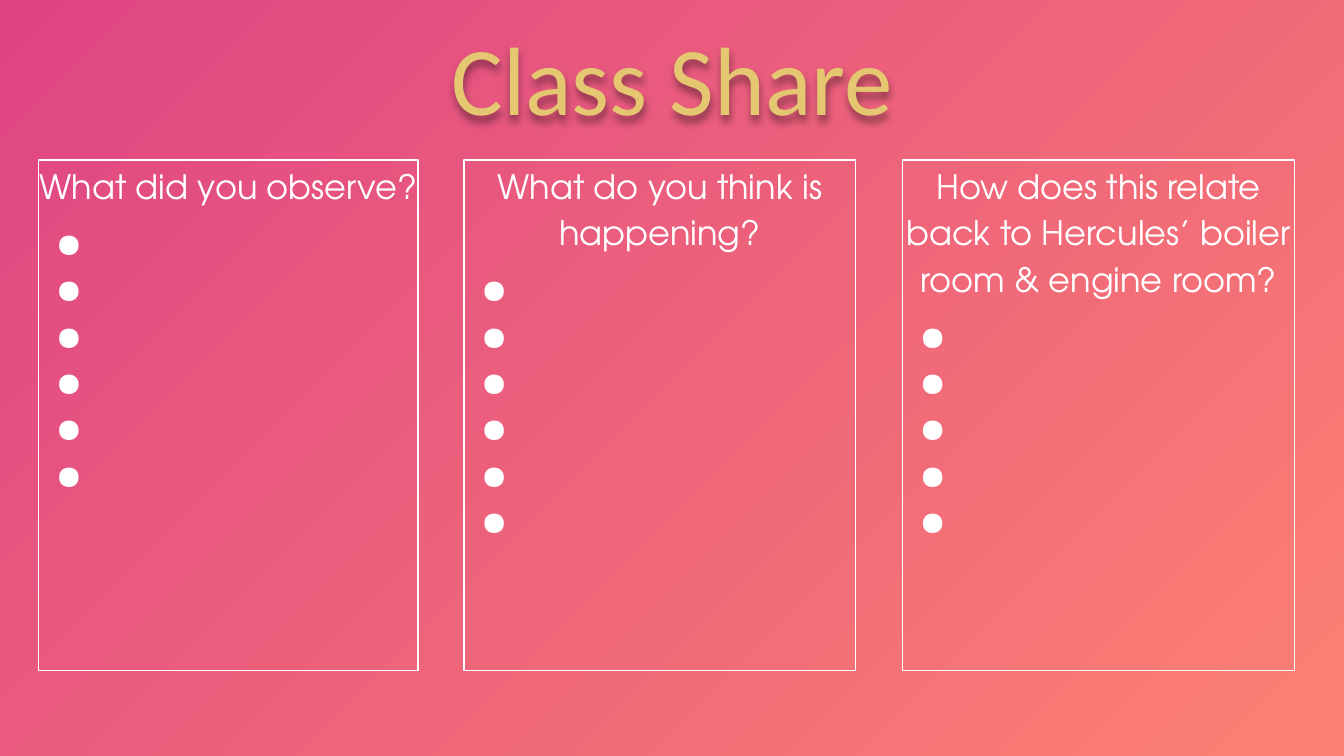
from lxml.etree import SubElement
from pptx import Presentation
from pptx.dml.color import RGBColor
from pptx.enum.shapes import MSO_SHAPE as SHAPE
from pptx.enum.text import MSO_ANCHOR as ANCHOR, MSO_AUTO_SIZE as AUTO, PP_ALIGN as ALIGN
from pptx.oxml.ns import qn
from pptx.util import Pt

WHITE = RGBColor(0xFF, 0xFF, 0xFF)
GOLD = RGBColor(0xE5, 0xC7, 0x71)
CORAL = RGBColor(0xFC, 0x81, 0x72)
PINK = RGBColor(0xDF, 0x45, 0x84)


def add_text(p, text, size=18, font="TeX Gyre Adventor", color=WHITE,
             align=ALIGN.LEFT, spacing=1.15, before=0):
    p.alignment, p.line_spacing, p.space_before = align, spacing, Pt(before)
    r = p.add_run()
    r.text = text
    r.font.size, r.font.name = Pt(size), font
    r.font.color.rgb = color


def add_bullet(p, indent=36, hanging=27):
    pPr = p._p.get_or_add_pPr()
    pPr.set("marL", str(Pt(indent)))
    pPr.set("indent", str(-Pt(hanging)))
    clr = SubElement(pPr, qn("a:buClr"))
    SubElement(clr, qn("a:srgbClr"), val=str(WHITE))
    SubElement(pPr, qn("a:buChar"), char="●")


class Deck:
    def __init__(self, width, height):
        self.prs = Presentation()
        self.prs.slide_width, self.prs.slide_height = Pt(width), Pt(height)
        self.slide = self.prs.slides.add_slide(self.prs.slide_layouts[5])

    def background(self, start, end):
        """Gradient that spreads from the bottom right corner."""
        fill = self.slide.background.fill
        fill.gradient()
        for stop, color, pos in zip(fill.gradient_stops, (start, end), (0, 1)):
            stop.color.rgb, stop.position = color, pos
        grad = self.slide._element.find(".//" + qn("a:gradFill"))
        grad.remove(grad.find(qn("a:lin")))
        circle = SubElement(grad, qn("a:path"), path="circle")
        SubElement(circle, qn("a:fillToRect"), l="100000", t="100000")

    def frame(self, sp, anchor):
        tf = sp.text_frame
        tf.word_wrap, tf.auto_size, tf.vertical_anchor = True, AUTO.NONE, anchor
        tf.margin_left = tf.margin_right = tf.margin_top = tf.margin_bottom = 0
        return tf

    def title(self, text, left, top, width, height):
        sp = self.slide.shapes.title
        sp.left, sp.top, sp.width, sp.height = map(Pt, (left, top, width, height))
        tf = self.frame(sp, ANCHOR.BOTTOM)
        add_text(tf.paragraphs[0], text, size=52, font="Calibri", color=GOLD,
                 align=ALIGN.CENTER, spacing=0.9)
        # Soft shadow below the letters
        effects = SubElement(sp._element.spPr, qn("a:effectLst"))
        shadow = SubElement(effects, qn("a:outerShdw"), blurRad=str(Pt(4)),
                            dist=str(Pt(3)), dir="5400000", rotWithShape="0")
        clr = SubElement(shadow, qn("a:srgbClr"), val="000000")
        SubElement(clr, qn("a:alpha"), val="40000")

    def column(self, question, bullets, left, top, width, height):
        sp = self.slide.shapes.add_shape(SHAPE.RECTANGLE, *map(Pt, (left, top, width, height)))
        sp.shadow.inherit = False
        sp.fill.background()
        sp.line.color.rgb, sp.line.width = WHITE, Pt(0.75)
        tf = self.frame(sp, ANCHOR.TOP)
        add_text(tf.paragraphs[0], question, align=ALIGN.CENTER)
        for i in range(bullets):
            p = tf.add_paragraph()
            add_text(p, " ", before=0 if i else 8)
            add_bullet(p)


def main():
    deck = Deck(720, 405)
    deck.background(CORAL, PINK)
    deck.title("Class Share", 77, 16, 566, 57)

    # Question columns: text, bullet count, left, width
    columns = [
        ("What did you observe?", 6, 20.8, 203.2),
        ("What do you think is happening?", 6, 248.6, 209.8),
        ("How does this relate back to Hercules’ boiler room & engine room?", 5, 483.6, 209.8),
    ]
    for question, bullets, left, width in columns:
        deck.column(question, bullets, left, 85.7, width, 273.6)

    deck.prs.save("out.pptx")


if __name__ == "__main__":
    main()
